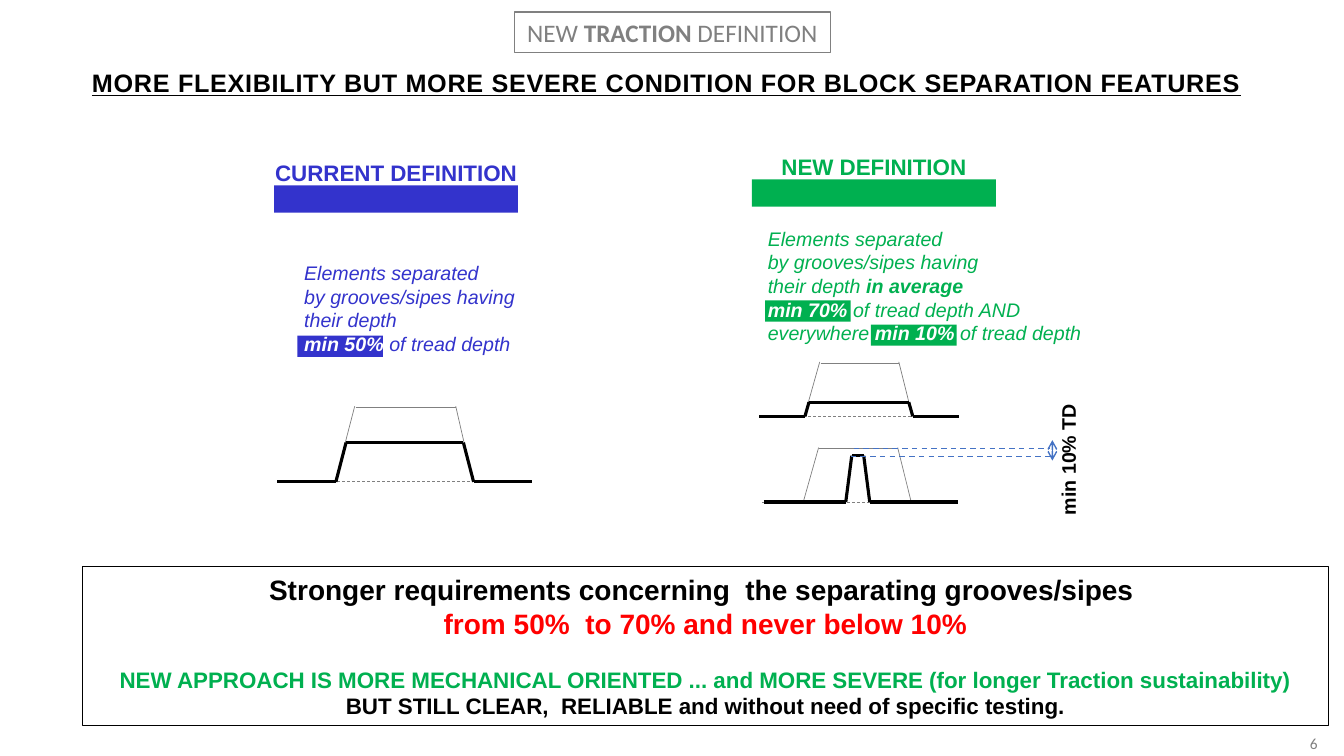
from itertools import pairwise

from lxml import etree
from pptx import Presentation
from pptx.dml.color import RGBColor
from pptx.enum.dml import MSO_LINE
from pptx.enum.shapes import MSO_CONNECTOR, MSO_SHAPE
from pptx.enum.text import MSO_ANCHOR, PP_ALIGN
from pptx.oxml.ns import qn
from pptx.util import Pt

STRAIGHT = MSO_CONNECTOR.STRAIGHT
RECTANGLE = MSO_SHAPE.RECTANGLE
DASH = MSO_LINE.DASH
MIDDLE = MSO_ANCHOR.MIDDLE
TOP = MSO_ANCHOR.TOP
LEFT, CENTER, RIGHT = PP_ALIGN.LEFT, PP_ALIGN.CENTER, PP_ALIGN.RIGHT

BLACK = RGBColor(0x00, 0x00, 0x00)
WHITE = RGBColor(0xFF, 0xFF, 0xFF)
GRAY = RGBColor(0x80, 0x80, 0x80)
RED = RGBColor(0xFF, 0x00, 0x00)
BLUE = RGBColor(0x33, 0x33, 0xCC)
GREEN = RGBColor(0x00, 0xB0, 0x50)
GUIDE = RGBColor(0x44, 0x72, 0xC4)


def add_span(para, text, size, color, bold=False, italic=False, font="Arial"):
    span = para.add_run()
    span.text = text
    span.font.name = font
    span.font.size = Pt(size)
    span.font.bold = bold
    span.font.italic = italic
    span.font.color.rgb = color
    return span


def add_paras(shape, count, align, wrap=True, anchor=TOP):
    frame = shape.text_frame
    frame.word_wrap = wrap
    frame.vertical_anchor = anchor
    paras = [frame.paragraphs[0]] + [frame.add_paragraph() for _ in range(count - 1)]
    for para in paras:
        para.alignment = align
    return paras


def add_text_box(page, left, top, width, height):
    return page.shapes.add_textbox(Pt(left), Pt(top), Pt(width), Pt(height))


def add_rectangle(page, left, top, width, height, fill=None, line=None):
    box = page.shapes.add_shape(RECTANGLE, Pt(left), Pt(top), Pt(width), Pt(height))
    box.shadow.inherit = False
    if fill is None:
        box.fill.background()
    else:
        box.fill.solid()
        box.fill.fore_color.rgb = fill
    if line is None:
        box.line.fill.background()
    else:
        box.line.color.rgb = line
        box.line.width = Pt(0.75)
    return box


def add_line(page, start, end, color, width, dash=None):
    line = page.shapes.add_connector(STRAIGHT, *[Pt(value) for value in (*start, *end)])
    line.line.color.rgb = color
    line.line.width = Pt(width)
    if dash is not None:
        line.line.dash_style = dash
    etree.SubElement(line._element.spPr, qn("a:effectLst"))
    return line


def add_double_arrow(page, start, end):
    arrow = add_line(page, start, end, GUIDE, 1)
    outline = arrow._element.spPr.find(qn("a:ln"))
    for tag in ("a:headEnd", "a:tailEnd"):
        etree.SubElement(outline, qn(tag)).set("type", "arrow")


def add_header(page, left, top, width):
    tag = add_rectangle(page, left + 319, top, 226, 28.8, line=GRAY)
    para = add_paras(tag, 1, CENTER, wrap=False, anchor=MIDDLE)[0]
    for text, bold in (("NEW", False), (" TRACTION ", True), ("DEFINITION", False)):
        add_span(para, text, 18, GRAY, bold, font="Calibri")
    title = add_text_box(page, left, top + 36, width, 28.8)
    para = add_paras(title, 1, CENTER, wrap=False)[0]
    span = add_span(
        para,
        "MORE FLEXIBILITY BUT MORE SEVERE CONDITION FOR BLOCK SEPARATION FEATURES",
        18, BLACK, True,
    )
    span.font.underline = True
    span._r.get_or_add_rPr().set("spc", "50")


def add_definition(page, left, top, color, heading, body_offset, highlights, lines):
    add_rectangle(page, left, top, 174.2, 19.4, fill=color)
    for across, down in highlights:
        add_rectangle(page, left + across, top + down, 61.2, 15.1, fill=color)
    label = add_text_box(page, left - 10, top - 22, 194.2, 26.6)
    add_span(add_paras(label, 1, CENTER, wrap=False)[0], heading, 16, color, True)
    across, down = body_offset
    body = add_text_box(page, left + across, top + down, 260, 20 + 16 * len(lines))
    for para, spans in zip(add_paras(body, len(lines), LEFT), lines):
        for text, bold, span_color in spans:
            add_span(para, text, 14, span_color, bold, italic=True)


def add_block_profile(page, left, base, width, height, groove):
    def spot(across, up):
        return left + across * width, base - up * height

    add_line(page, spot(0.02, 0), spot(0.92, 0), GRAY, 0.5, DASH)
    for start, end in (
        ((0.227, 0), (0.304, 1)),
        ((0.308, 0.98), (0.7, 0.98)),
        ((0.7, 1), (0.768, 0)),
    ):
        add_line(page, spot(*start), spot(*end), GRAY, 0.5)
    for start, end in pairwise(groove):
        add_line(page, spot(*start), spot(*end), BLACK, 2.25)


def add_depth_mark(page, left, top):
    for across, down in ((2, 0), (0, 5.8)):
        add_line(page, (left + across, top + down), (left + 142.5, top + down), GUIDE, 1, DASH)
    add_double_arrow(page, (left + 144, top - 6), (left + 144, top + 8.6))
    label = add_text_box(page, left + 100, top - 4.4, 110.9, 24.5)
    label.rotation = 270
    add_span(add_paras(label, 1, CENTER)[0], "min 10% TD", 14, BLACK, True)


def add_conclusion(page, left, top, width, height):
    box = add_rectangle(page, left, top, width, height, WHITE, BLACK)
    lines = (
        ("Stronger requirements concerning  the separating grooves/sipes ", 20, BLACK),
        ("from 50%  to 70% and never below 10%", 20, RED),
        ("NEW APPROACH IS MORE MECHANICAL ORIENTED ... and MORE SEVERE "
         "(for longer Traction sustainability)", 16, GREEN),
        ("BUT STILL CLEAR,  RELIABLE and without need of specific testing.", 16, BLACK),
    )
    paras = add_paras(box, len(lines), CENTER, anchor=MIDDLE)
    for para, (text, size, color) in zip(paras, lines):
        add_span(para, text, size, color, True)
    paras[2].space_before = Pt(18.4)


def add_page_number(page, left, top):
    box = add_text_box(page, left, top, 27.4, 20.9)
    add_span(add_paras(box, 1, RIGHT, wrap=False)[0], "6", 11, GRAY, font="Calibri")


def main():
    deck = Presentation()
    deck.slide_width, deck.slide_height = Pt(960), Pt(540)
    page = deck.slides.add_slide(deck.slide_layouts[6])
    add_page_number(page, 920.9, 520.6)
    add_header(page, 48.2, 8.6, 856)
    add_conclusion(page, 59, 404.6, 890, 113.8)
    add_definition(
        page, 195.8, 132.5, BLUE, "CURRENT DEFINITION", (14.4, 50.4), [(16.6, 107.3)],
        [
            [("Elements separated", False, BLUE)],
            [("by grooves/sipes having", False, BLUE)],
            [("their depth", False, BLUE)],
            [("min 50% ", True, WHITE), ("of tread depth", False, BLUE)],
        ],
    )
    add_definition(
        page, 537.1, 128.2, GREEN, "NEW DEFINITION", (4.3, 30.3), [(9.4, 86.4), (85, 103.6)],
        [
            [("Elements separated", False, GREEN)],
            [("by grooves/sipes having", False, GREEN)],
            [("their depth ", False, GREEN), ("in average", True, GREEN)],
            [("min 70% ", True, WHITE), ("of tread depth AND", False, GREEN)],
            [("everywhere ", False, GREEN), ("min 10% ", True, WHITE),
             ("of tread depth", False, GREEN)],
        ],
    )
    add_block_profile(
        page, 198, 344.2, 182.2, 54,
        [(0, 0), (0.23, 0), (0.27, 0.52), (0.73, 0.52), (0.77, 0), (1, 0)],
    )
    add_block_profile(
        page, 542.2, 297.4, 142.6, 38.9,
        [(0, 0), (0.23, 0), (0.25, 0.26), (0.75, 0.26), (0.77, 0), (1, 0)],
    )
    add_block_profile(
        page, 541.4, 358.6, 142.6, 38.9,
        [(0.03, 0), (0.44, 0), (0.47, 0.85), (0.53, 0.85), (0.56, 0), (1, 0)],
    )
    add_depth_mark(page, 607.7, 320.4)
    deck.save("out.pptx")


if __name__ == "__main__":
    main()
